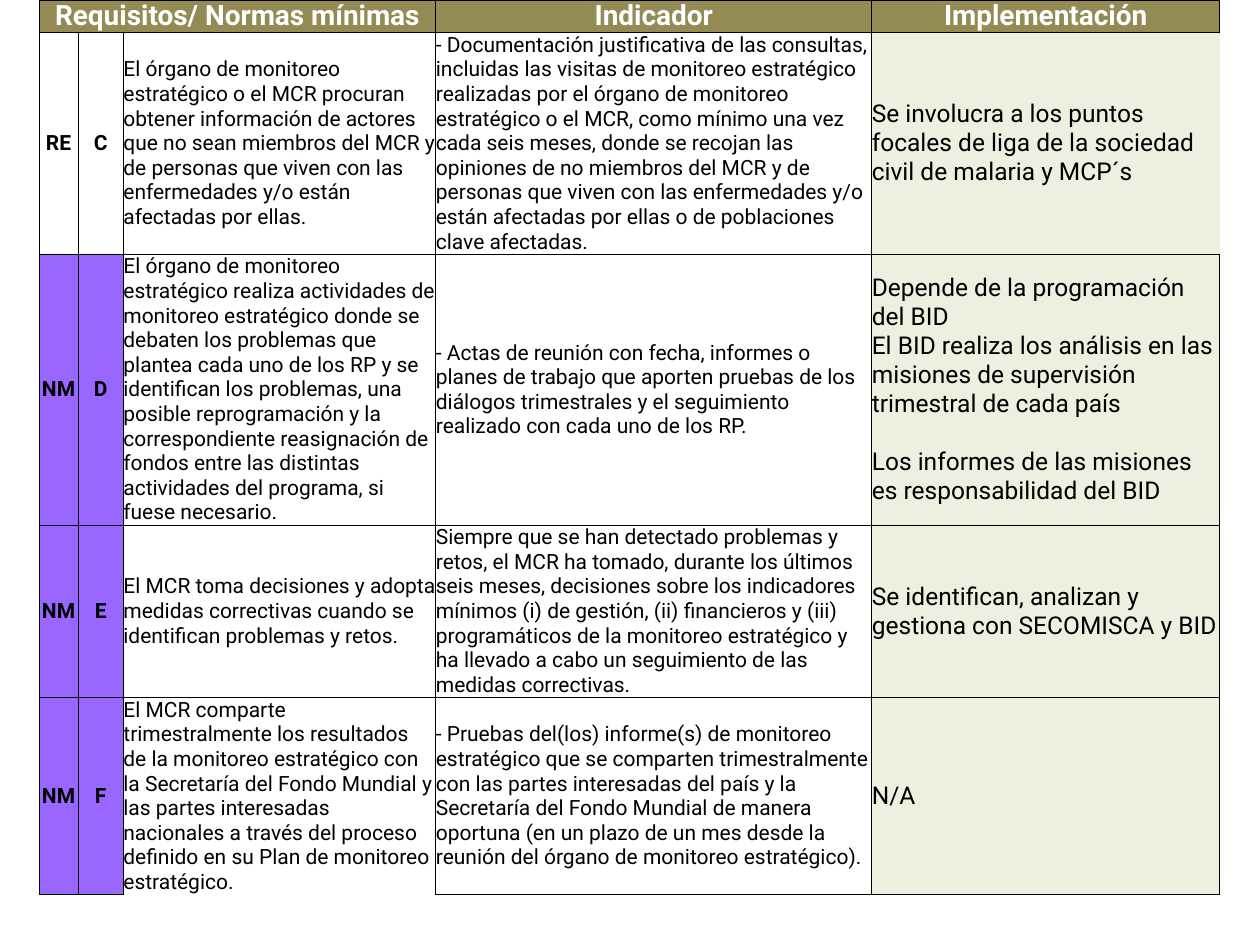
from lxml import etree
from pptx import Presentation
from pptx.dml.color import RGBColor
from pptx.enum import text
from pptx.oxml import ns
from pptx.util import Inches, Pt

BLACK = RGBColor(0x00, 0x00, 0x00)
WHITE = RGBColor(0xFF, 0xFF, 0xFF)
OLIVE = RGBColor(0x94, 0x8A, 0x54)
PURPLE = RGBColor(0x99, 0x66, 0xFF)
PALE_GREEN = RGBColor(0xEB, 0xF1, 0xDE)

COLUMN_WIDTHS = [0.31, 0.36, 2.48, 3.46, 2.76]
ROW_HEIGHTS = [0.25, 1.76, 2.14, 1.37, 1.55]

CENTER, LEFT = text.PP_ALIGN.CENTER, text.PP_ALIGN.LEFT
HEADER = {"size": Pt(16), "bold": True, "color": WHITE, "align": CENTER}
CODE = {"size": Pt(12), "bold": True, "color": BLACK, "align": CENTER}
BODY = {"size": Pt(12), "bold": False, "color": BLACK, "align": LEFT}
STATUS = {**BODY, "size": Pt(14)}
COLUMN_FORMATS = [CODE, CODE, BODY, BODY, STATUS]

HEADINGS = {0: "Requisitos/ Normas mínimas", 3: "Indicador", 4: "Implementación"}

# Kind, letter, requirement, indicator, implementation paragraphs
STANDARDS = [
    ("RE", "C",
     "El órgano de monitoreo estratégico o el MCR procuran obtener información de "
     "actores que no sean miembros del MCR y de personas que viven con las "
     "enfermedades y/o están afectadas por ellas.",
     "- Documentación justificativa de las consultas, incluidas las visitas de "
     "monitoreo estratégico realizadas por el órgano de monitoreo estratégico o el "
     "MCR, como mínimo una vez cada seis meses, donde se recojan las opiniones de no "
     "miembros del MCR y de personas que viven con las enfermedades y/o están "
     "afectadas por ellas o de poblaciones clave afectadas.",
     "Se involucra a los puntos focales de liga de la sociedad civil de malaria y MCP´s"),
    ("NM", "D",
     "El órgano de monitoreo estratégico realiza actividades de monitoreo estratégico "
     "donde se debaten los problemas que plantea cada uno de los RP y se identifican "
     "los problemas, una posible reprogramación y la correspondiente reasignación de "
     "fondos entre las distintas actividades del programa, si fuese necesario.",
     "- Actas de reunión con fecha, informes o planes de trabajo que aporten pruebas "
     "de los diálogos trimestrales y el seguimiento realizado con cada uno de los RP.",
     "Depende de la programación del BID\n"
     "El BID realiza los análisis en las misiones de supervisión trimestral de cada país\n"
     "Los informes de las misiones es responsabilidad del BID"),
    ("NM", "E",
     "El MCR toma decisiones y adopta medidas correctivas cuando se identifican "
     "problemas y retos.",
     "Siempre que se han detectado problemas y retos, el MCR ha tomado, durante los "
     "últimos seis meses, decisiones sobre los indicadores mínimos (i) de gestión, "
     "(ii) financieros y (iii) programáticos de la monitoreo estratégico y ha llevado "
     "a cabo un seguimiento de las medidas correctivas.",
     "Se identifican, analizan y gestiona con SECOMISCA y BID"),
    ("NM", "F",
     "El MCR comparte trimestralmente los resultados de la monitoreo estratégico con "
     "la Secretaría del Fondo Mundial y las partes interesadas nacionales a través del "
     "proceso definido en su Plan de monitoreo estratégico.",
     "- Pruebas del(los) informe(s) de monitoreo estratégico que se comparten "
     "trimestralmente con las partes interesadas del país y la Secretaría del Fondo "
     "Mundial de manera oportuna (en un plazo de un mes desde la reunión del órgano de "
     "monitoreo estratégico).",
     "N/A"),
]


def set_borders(cell, open_side=None):
    """Draw thin black borders on every side but the open one."""
    properties = cell._tc.get_or_add_tcPr()
    for side in "LRTB":
        line = etree.SubElement(properties, ns.qn(f"a:ln{side}"), w=str(Pt(0.5)))
        if side == open_side:
            etree.SubElement(line, ns.qn("a:noFill"))
        else:
            solid = etree.SubElement(line, ns.qn("a:solidFill"))
            etree.SubElement(solid, ns.qn("a:srgbClr"), val=str(BLACK))


def set_fill(cell, color):
    if color is None:
        cell.fill.background()
    else:
        cell.fill.solid()
        cell.fill.fore_color.rgb = color


def write_cell(cell, wording, style):
    cell.text = wording
    cell.vertical_anchor = text.MSO_ANCHOR.MIDDLE
    for side in ("left", "right", "top", "bottom"):
        setattr(cell, f"margin_{side}", 0)
    for paragraph in cell.text_frame.paragraphs:
        paragraph.alignment = style["align"]
        for run in paragraph.runs:
            for name in ("size", "bold"):
                setattr(run.font, name, style[name])
            run.font.name = "Roboto"
            run.font.color.rgb = style["color"]


def add_standards_table(slide):
    frame = slide.shapes.add_table(
        len(ROW_HEIGHTS), len(COLUMN_WIDTHS), Inches(0.31), 0,
        Inches(sum(COLUMN_WIDTHS)), Inches(sum(ROW_HEIGHTS)))
    standards = frame.table
    standards.first_row = standards.horz_banding = False
    for column, width in zip(standards.columns, COLUMN_WIDTHS):
        column.width = Inches(width)
    for row, height in zip(standards.rows, ROW_HEIGHTS):
        row.height = Inches(height)
    return standards


def fill_header(standards):
    for cell in standards.rows[0].cells:
        set_borders(cell)
        set_fill(cell, OLIVE)
    for column, heading in HEADINGS.items():
        write_cell(standards.cell(0, column), heading, HEADER)
    standards.cell(0, 0).merge(standards.cell(0, 2))


def fill_standard(standards, row, standard):
    code_fill = PURPLE if standard[0] == "NM" else None
    fills = [code_fill, code_fill, None, WHITE, PALE_GREEN]
    # Two cells at the table's edge are open on their outer side
    open_sides = {(1, 4): "R", (len(STANDARDS), 2): "B"}
    for column, wording in enumerate(standard):
        cell = standards.cell(row, column)
        set_borders(cell, open_sides.get((row, column)))
        set_fill(cell, fills[column])
        write_cell(cell, wording, COLUMN_FORMATS[column])


def main():
    deck = Presentation()
    deck.slide_width, deck.slide_height = Inches(10), Inches(7.5)
    slide = deck.slides.add_slide(deck.slide_layouts[6])

    standards = add_standards_table(slide)
    fill_header(standards)
    for row, standard in enumerate(STANDARDS, start=1):
        fill_standard(standards, row, standard)

    # One line of space sets the report duty apart
    report_duty = standards.cell(2, 4).text_frame.paragraphs[-1]
    report_duty.space_before = Pt(16.5)

    deck.save("out.pptx")


if __name__ == "__main__":
    main()
